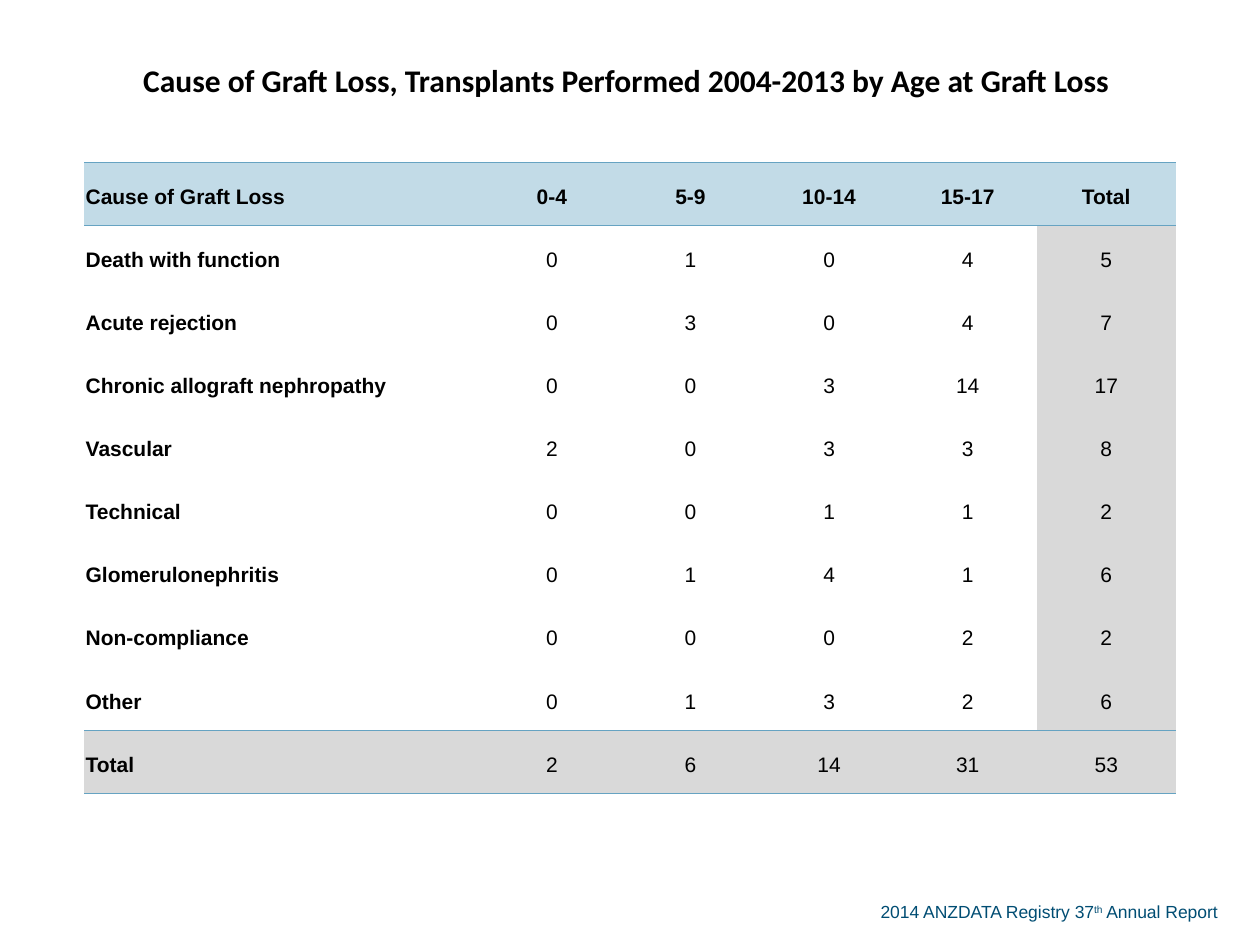
from lxml import etree
from pptx import Presentation, util as u
from pptx.dml.color import RGBColor
from pptx.enum import text
from pptx.oxml.ns import qn

COLORS = {
    "ink": "000000",
    "header": "C2DBE7",
    "total": "D9D9D9",
    "rule": "66A3C2",
    "footer": "004D73",
}
W, H = 10, 7.5
NO_STYLE = "{2D5ABB26-0587-4C30-8999-92F81FD0307C}"
TITLE = "Cause of Graft Loss, Transplants Performed 2004-2013 by Age at Graft Loss "
HEADER = ["Cause of Graft Loss", "0-4", "5-9", "10-14", "15-17", "Total"]
CAUSES = [
    ["Death with function", 0, 1, 0, 4, 5],
    ["Acute rejection", 0, 3, 0, 4, 7],
    ["Chronic allograft nephropathy", 0, 0, 3, 14, 17],
    ["Vascular", 2, 0, 3, 3, 8],
    ["Technical", 0, 0, 1, 1, 2],
    ["Glomerulonephritis", 0, 1, 4, 1, 6],
    ["Non-compliance", 0, 0, 0, 2, 2],
    ["Other", 0, 1, 3, 2, 6],
]
TOTALS = ["Total", 2, 6, 14, 31, 53]


def add_run(p, words, font, size, color, bold=False):
    r = p.add_run()
    r.text = words
    r.font.name = font
    r.font.size = u.Pt(size)
    r.font.bold = bold
    r.font.color.rgb = RGBColor.from_string(COLORS[color])
    return r


def set_rules(cell, ruled):
    tcPr = cell._tc.get_or_add_tcPr()
    for side in ("lnL", "lnR", "lnT", "lnB"):
        ln = etree.SubElement(tcPr, qn("a:" + side))
        if side in ruled:
            ln.set("w", str(u.Pt(0.5)))
            fill = etree.SubElement(ln, qn("a:solidFill"))
            etree.SubElement(fill, qn("a:srgbClr"), val=COLORS["rule"])
        else:
            etree.SubElement(ln, qn("a:noFill"))


def format_cell(cell, fill, ruled):
    cell.margin_left = cell.margin_right = cell.margin_top = u.Inches(0.01)
    cell.margin_bottom = 0
    cell.vertical_anchor = text.MSO_ANCHOR.MIDDLE
    set_rules(cell, ruled)
    if fill:
        cell.fill.solid()
        cell.fill.fore_color.rgb = RGBColor.from_string(COLORS[fill])
    else:
        cell.fill.background()


def add_loss_table(slide, x, y, w, h):
    rows = [HEADER, *CAUSES, TOTALS]
    last_row, last_col = len(rows), len(HEADER) - 1
    table = slide.shapes.add_table(
        last_row + 1, last_col + 1, *map(u.Inches, (x, y, w, h))).table
    table.horz_banding = False
    table._tbl.tblPr.find(qn("a:tableStyleId")).text = NO_STYLE

    age_w, title_h = 1.1, 1.29
    for i, col in enumerate(table.columns):
        col.width = u.Inches(age_w if i else w - age_w * last_col)
    for i, row in enumerate(table.rows):
        row.height = u.Inches((h - title_h) / last_row if i else title_h)

    title = table.cell(0, 0)
    title.merge(table.cell(0, last_col))
    for c in range(last_col + 1):
        format_cell(table.cell(0, c), None, ["lnB"])
    p = title.text_frame.paragraphs[0]
    p.alignment = text.PP_ALIGN.CENTER
    add_run(p, TITLE, "Calibri", 18, "ink", True)

    for r, values in enumerate(rows, 1):
        ruled = []
        if r in (1, 2, last_row):
            ruled.append("lnT")
        if r in (1, last_row - 1, last_row):
            ruled.append("lnB")
        for c, value in enumerate(values):
            is_total = r == last_row or c == last_col
            fill = "header" if r == 1 else "total" if is_total else None
            cell = table.cell(r, c)
            format_cell(cell, fill, ruled)
            p = cell.text_frame.paragraphs[0]
            p.alignment = text.PP_ALIGN.CENTER if c else text.PP_ALIGN.LEFT
            p.line_spacing = 1.19
            p.space_after = u.Pt(14)
            add_run(p, str(value), "Arial", 12, "ink", r == 1 or c == 0)


def add_footer(slide, x, y, w, h):
    tf = slide.shapes.add_textbox(*map(u.Inches, (x, y, w, h))).text_frame
    tf.word_wrap = True
    p = tf.paragraphs[0]
    for words, raised in [("2014 ANZDATA Registry 37", False), ("th", True),
                          (" Annual Report", False)]:
        r = add_run(p, words, "Arial", 10, "footer")
        if raised:
            r.font._element.set("baseline", "30000")


def main():
    prs = Presentation()
    prs.slide_width, prs.slide_height = u.Inches(W), u.Inches(H)
    slide = prs.slides.add_slide(prs.slide_layouts[6])
    add_footer(slide, 0.689 * W, 7.1, 0.299 * W, 0.27)
    add_loss_table(slide, 0.067 * W, 0, 0.866 * W, 0.84 * H)
    prs.save("out.pptx")


if __name__ == "__main__":
    main()
